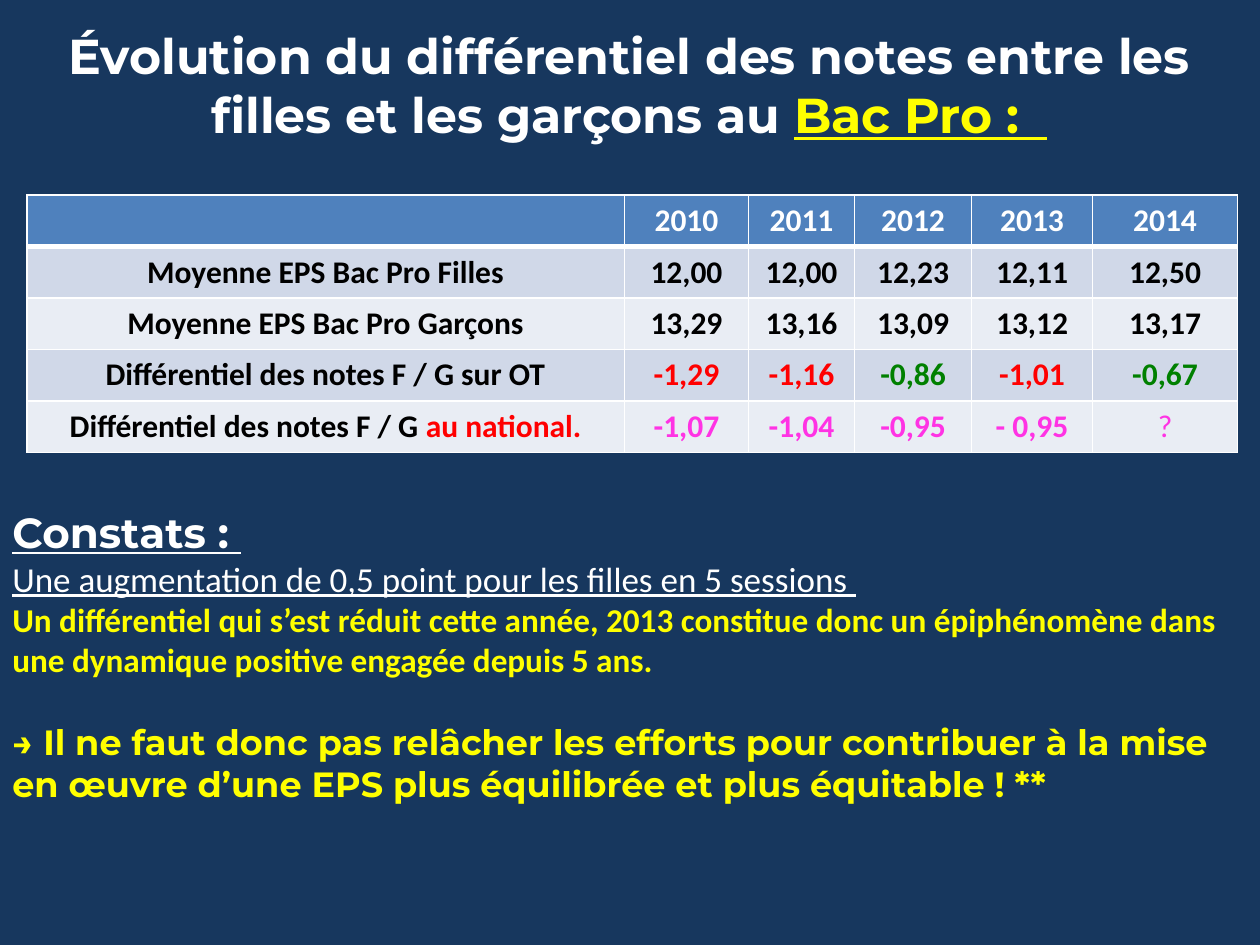
import pptx
import pptx.util
import pptx.dml.color
import pptx.enum.text
import pptx.oxml
import pptx.oxml.ns
from dataclasses import dataclass

Pt = pptx.util.Pt
CENTER = pptx.enum.text.PP_ALIGN.CENTER
LEFT = pptx.enum.text.PP_ALIGN.LEFT
TOP = pptx.enum.text.MSO_ANCHOR.TOP
MIDDLE = pptx.enum.text.MSO_ANCHOR.MIDDLE


@dataclass(frozen=True)
class Theme:
    background: str = "17375E"
    header: str = "4F81BD"
    bands: tuple = ("D0D8E8", "E9EDF4")
    white: str = "FFFFFF"
    black: str = "000000"
    yellow: str = "FFFF00"
    red: str = "FF0000"
    green: str = "008000"
    pink: str = "FF33E4"
    heading_font: str = "Montserrat"
    body_font: str = "Calibri"
    title_size: int = 28
    heading_size: int = 24
    body_size: int = 20
    finding_size: int = 19
    table_size: int = 18


theme = Theme()


def add_span(para, text, font, size, color, bold=True, underline=False):
    span = para.add_run()
    span.text = text
    span.font.name = font
    span.font.size = Pt(size)
    span.font.bold = bold
    span.font.underline = underline
    span.font.color.rgb = pptx.dml.color.RGBColor.from_string(color)


def add_border(cell, side, width):
    properties = cell._tc.get_or_add_tcPr()
    properties.append(pptx.oxml.parse_xml(
        f'<a:{side} {pptx.oxml.ns.nsdecls("a")} w="{Pt(width)}"><a:solidFill>'
        f'<a:srgbClr val="{theme.white}"/></a:solidFill></a:{side}>'))


deck = pptx.Presentation()
deck.slide_width, deck.slide_height = Pt(720), Pt(540)
page = deck.slides.add_slide(deck.slide_layouts[5])
page.background.fill.solid()
page.background.fill.fore_color.rgb = pptx.dml.color.RGBColor.from_string(theme.background)

# Title
title = page.shapes.title
title.left, title.top, title.width, title.height = Pt(20), Pt(11), Pt(679), Pt(75)
title.text_frame.word_wrap = True
title.text_frame.auto_size = pptx.enum.text.MSO_AUTO_SIZE.NONE
title.text_frame.vertical_anchor = TOP
para = title.text_frame.paragraphs[0]
para.alignment = CENTER
add_span(para, "Évolution du différentiel des notes entre les filles et les garçons au ",
         theme.heading_font, theme.title_size, theme.white)
add_span(para, "Bac Pro :  ", theme.heading_font, theme.title_size, theme.yellow, underline=True)

# Table of marks: each cell is a text, or a list of (text, colour) spans
red, green, pink, black = theme.red, theme.green, theme.pink, theme.black
rows = [
    ["", "2010", "2011", "2012", "2013", "2014"],
    ["Moyenne EPS Bac Pro Filles", "12,00", "12,00", "12,23", "12,11", "12,50"],
    ["Moyenne EPS Bac Pro Garçons", "13,29", "13,16", "13,09", "13,12", "13,17"],
    ["Différentiel des notes F / G sur OT", [("-1,29", red)], [("-1,16", red)],
     [("-0,86", green)], [("-1,01", red)], [("-0,67", green)]],
    [[("Différentiel des notes F / G ", black), ("au national.", red)], [("-1,07", pink)],
     [("-1,04", pink)], [("-0,95", pink)], [("- 0,95", pink)], [("?", pink)]],
]
column_widths = [341.5, 71, 60.5, 67, 69, 83]
row_height = 29.4
table = page.shapes.add_table(len(rows), len(column_widths), Pt(15.3), Pt(111.5),
                              Pt(sum(column_widths)), Pt(row_height * len(rows))).table
for column, width in zip(table.columns, column_widths):
    column.width = Pt(width)

for row_index, row in enumerate(rows):
    table.rows[row_index].height = Pt(row_height)
    is_header = row_index == 0
    fill = theme.header if is_header else theme.bands[(row_index - 1) % 2]
    for column_index, content in enumerate(row):
        cell = table.cell(row_index, column_index)
        cell.vertical_anchor = MIDDLE
        for side in ("lnL", "lnR", "lnT", "lnB"):
            under_header = (row_index, side) in ((0, "lnB"), (1, "lnT"))
            add_border(cell, side, 3 if under_header else 1)
        cell.fill.solid()
        cell.fill.fore_color.rgb = pptx.dml.color.RGBColor.from_string(fill)
        para = cell.text_frame.paragraphs[0]
        para.alignment = CENTER
        para.font.size = Pt(theme.table_size)
        if isinstance(content, str):
            content = [(content, theme.white if is_header else black)] if content else []
        for text, color in content:
            add_span(para, text, theme.body_font, theme.table_size, color, bold=text != "?")

# Findings: text, font, size, colour, bold, underline, space before
findings = [
    ("Constats : ", theme.heading_font, theme.heading_size, theme.white, True, True, 0),
    ("Une augmentation de 0,5 point pour les filles en 5 sessions ",
     theme.body_font, theme.body_size, theme.white, False, True, 0),
    ("Un différentiel qui s’est réduit cette année, 2013 constitue donc un épiphénomène dans "
     "une dynamique positive engagée depuis 5 ans.",
     theme.body_font, theme.finding_size, theme.yellow, True, False, 0),
    ("→ Il ne faut donc pas relâcher les efforts pour contribuer à la mise en œuvre d’une EPS "
     "plus équilibrée et plus équitable ! **",
     theme.heading_font, theme.body_size, theme.yellow, True, False, 24),
]
box = page.shapes.add_textbox(Pt(0), Pt(286), Pt(712), Pt(179))
box.text_frame.word_wrap = True
for index, (text, font, size, color, bold, underline, space) in enumerate(findings):
    para = box.text_frame.paragraphs[0] if index == 0 else box.text_frame.add_paragraph()
    para.alignment = LEFT
    para.space_before = Pt(space)
    add_span(para, text, font, size, color, bold, underline)

deck.save("out.pptx")
